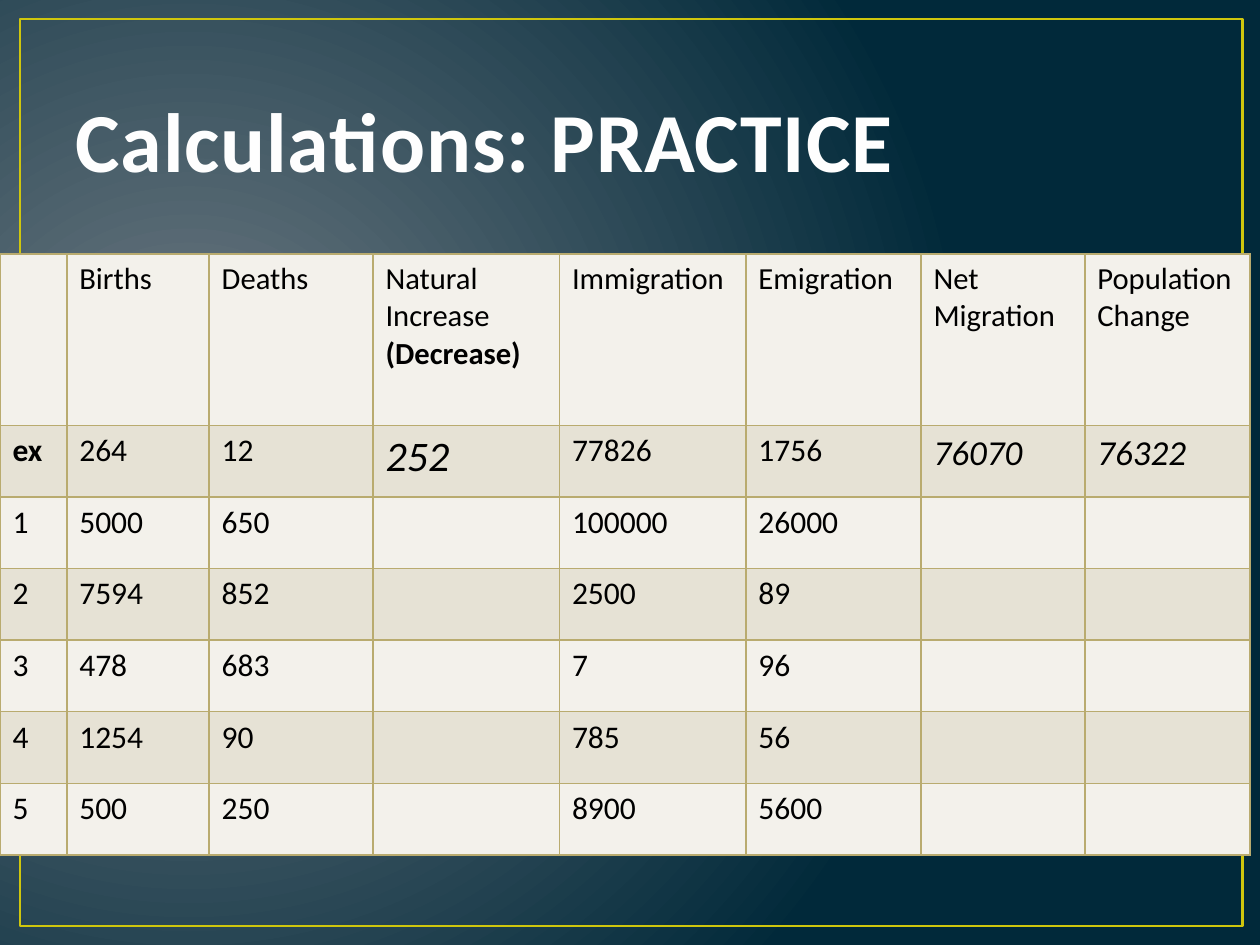
from lxml import etree
from pptx import Presentation
from pptx.dml.color import RGBColor
from pptx.enum import shapes, text
from pptx.oxml import parse_xml
from pptx.oxml import ns
from pptx.util import Pt

COLORS = {
    "glow": "717C84", "night": "01293A", "frame": "CFC60D",
    "title": "FEFEFE", "title_outline": "384F55", "ink": "000000",
    "border": "B9AB6F", "light_row": "F3F1EB", "dark_row": "E6E2D5",
}
FONT = "Calibri"
HEADERS = ["", "Births", "Deaths", "Natural Increase\n(Decrease)", "Immigration",
           "Emigration", "Net Migration", "Population Change"]
PRACTICE = [
    ["ex", "264", "12", "252", "77826", "1756", "76070", "76322"],
    ["1", "5000", "650", "", "100000", "26000", "", ""],
    ["2", "7594", "852", "", "2500", "89", "", ""],
    ["3", "478", "683", "", "7", "96", "", ""],
    ["4", "1254", "90", "", "785", "56", "", ""],
    ["5", "500", "250", "", "8900", "5600", "", ""],
]
COLUMN_WIDTHS = [38.16, 81.36, 93.6, 106.56, 106.56, 100.08, 93.6, 94.32]
HEADER_HEIGHT, ROW_HEIGHT = 97.9, 40.93
ANSWER_SIZES = {"252": 24, "76070": 20, "76322": 20}


def rgb(name):
    return RGBColor.from_string(COLORS[name])


def line_xml(tag, color, width):
    return parse_xml(
        f'<a:{tag} {ns.nsdecls("a")} w="{Pt(width)}"><a:solidFill>'
        f'<a:srgbClr val="{COLORS[color]}"/></a:solidFill></a:{tag}>')


def place(shape, box):
    shape.left, shape.top, shape.width, shape.height = (Pt(v) for v in box)


def style_run(run, size, color, bold=False, italic=False):
    font = run.font
    font.name, font.size, font.bold, font.italic = FONT, Pt(size), bold, italic
    font.color.rgb = rgb(color)


def paint_background(slide):
    fill = slide.background.fill
    fill.gradient()
    for stop, color in zip(fill.gradient_stops, ("glow", "night")):
        stop.color.rgb = rgb(color)
    # Swap the linear direction for a circular glow
    gradient = slide.background._cSld.find(".//" + ns.qn("a:gradFill"))
    gradient.remove(gradient.find(ns.qn("a:lin")))
    circle = etree.SubElement(gradient, ns.qn("a:path"), {"path": "circle"})
    etree.SubElement(circle, ns.qn("a:fillToRect"),
                     {"l": "15000", "t": "50000", "r": "85000", "b": "60000"})


def add_frame(slide, box):
    frame = slide.shapes.add_shape(shapes.MSO_SHAPE.RECTANGLE, 0, 0, 0, 0)
    place(frame, box)
    frame.shadow.inherit = False
    frame.fill.background()
    frame.line.color.rgb = rgb("frame")
    frame.line.width = Pt(1.5)
    slide.shapes._spTree.insert(2, frame._element)  # behind the title


def fill_title(slide, box):
    title = slide.shapes.title
    place(title, box)
    title.text_frame.text = "Calculations: PRACTICE"
    title.text_frame.vertical_anchor = text.MSO_ANCHOR.BOTTOM
    heading = title.text_frame.paragraphs[0]
    heading.alignment = text.PP_ALIGN.LEFT
    style_run(heading.runs[0], 48, "title", bold=True)
    properties = heading.runs[0].font._element
    properties.set("spc", "50")
    properties.insert(0, line_xml("ln", "title_outline", 1.05))


def fill_cell(cell, content, size, fill):
    cell.text_frame.text = content
    cell.fill.solid()
    cell.fill.fore_color.rgb = rgb(fill)
    for paragraph in cell.text_frame.paragraphs:
        paragraph.font.size = Pt(size)
        for run in paragraph.runs:
            style_run(run, ANSWER_SIZES.get(content, size), "ink",
                      bold=run.text in ("(Decrease)", "ex"),
                      italic=content in ANSWER_SIZES)
    # Borders come before the fill in the cell properties
    for index, side in enumerate(("lnL", "lnR", "lnT", "lnB")):
        cell._tc.tcPr.insert(index, line_xml(side, "border", 1))


def add_practice_table(slide, box):
    rows = [HEADERS] + PRACTICE
    table = slide.shapes.add_table(
        len(rows), len(HEADERS), *(Pt(v) for v in box)).table
    for column, width in zip(table.columns, COLUMN_WIDTHS):
        column.width = Pt(width)
    for r, row in enumerate(rows):
        table.rows[r].height = Pt(ROW_HEIGHT if r else HEADER_HEIGHT)
        for c, content in enumerate(row):
            fill_cell(table.cell(r, c), content, 18 if r else 17.5,
                      "dark_row" if r % 2 else "light_row")


def main():
    deck = Presentation()
    deck.slide_width, deck.slide_height = Pt(720), Pt(540)
    slide = deck.slides.add_slide(deck.slide_layouts[5])
    paint_background(slide)
    add_frame(slide, (11.5, 10.8, 698.4, 518.4))
    fill_title(slide, (36, 21.6, 648, 90))
    add_practice_table(slide, (0, 145.2, sum(COLUMN_WIDTHS),
                               HEADER_HEIGHT + len(PRACTICE) * ROW_HEIGHT))
    deck.save("out.pptx")


if __name__ == "__main__":
    main()
